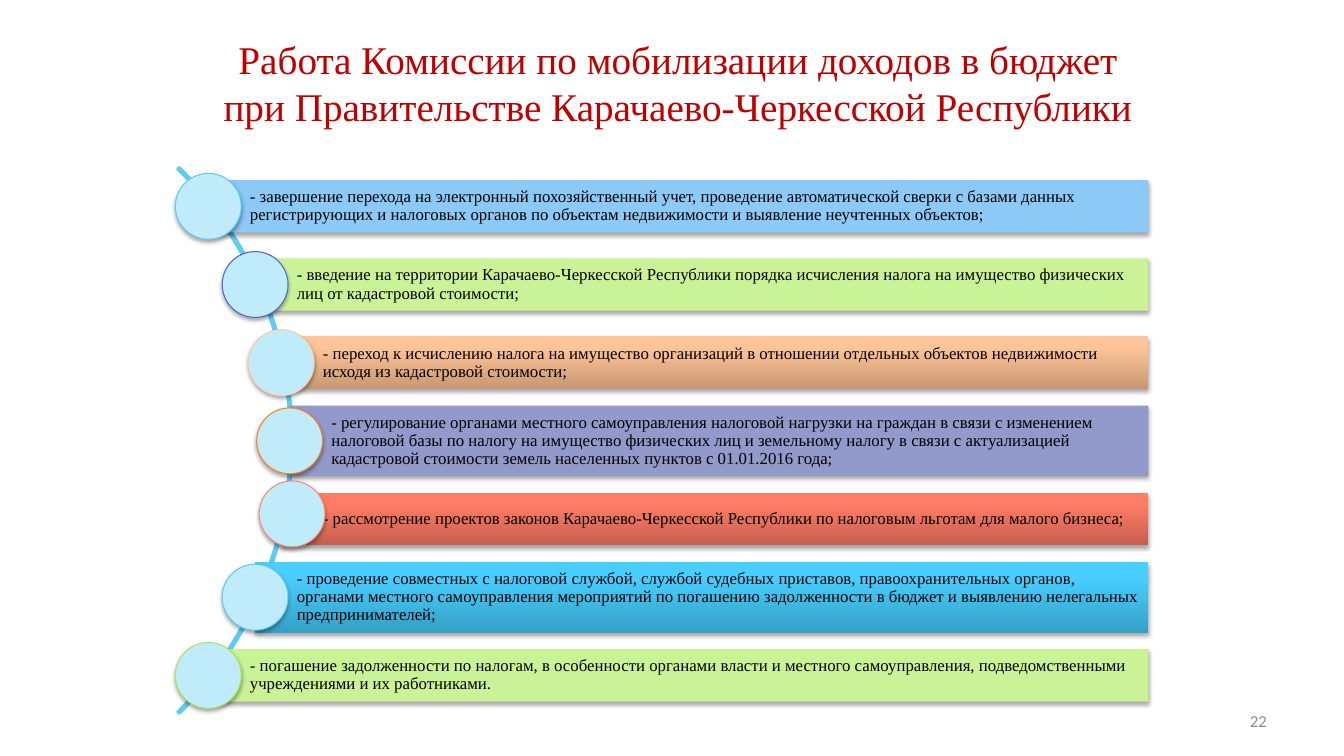
from lxml.etree import SubElement
from pptx import Presentation
from pptx.dml.color import RGBColor
from pptx.enum.shapes import MSO_SHAPE
from pptx.enum.text import MSO_ANCHOR, MSO_AUTO_SIZE, PP_ALIGN
from pptx.oxml.ns import qn
from pptx.util import Cm, Pt

BLACK = RGBColor(0x00, 0x00, 0x00)
DARK_RED = RGBColor(0xC0, 0x00, 0x00)
GREY = RGBColor(0x8C, 0x8C, 0x8C)
PALE_CYAN = RGBColor(0xBF, 0xEB, 0xFA)
CYAN = RGBColor(0x5E, 0xCC, 0xF3)
INDIGO = RGBColor(0x4E, 0x67, 0xC8)
PEACH = RGBColor(0xFF, 0xCC, 0xA6)
ORANGE = RGBColor(0xFF, 0x80, 0x21)
SALMON = RGBColor(0xF6, 0x8D, 0x7B)
GREEN = RGBColor(0xA7, 0xEA, 0x52)
SKY = RGBColor(0x8C, 0xC9, 0xF7)
LIME = RGBColor(0xCA, 0xF2, 0x97)
LAVENDER = RGBColor(0x91, 0x9A, 0xCA)
PEACH_SHADE = (RGBColor(0xC8, 0x97, 0x72), RGBColor(0xFF, 0xC5, 0x99))
RED_SHADE = (RGBColor(0xC5, 0x5F, 0x4E), RGBColor(0xFF, 0x7D, 0x67))
BLUE_SHADE = (RGBColor(0x35, 0xA0, 0xC6), RGBColor(0x48, 0xCF, 0xFF))

SERIF = "Times New Roman"
BAR_RIGHT = 28.94
FIRST_CENTRE = 5.2
PITCH = 1.97
DOT = 1.66
LOW, HIGH = 1.32, 1.78

TITLE = (
    "Работа Комиссии по мобилизации доходов в бюджет",
    "при Правительстве Карачаево-Черкесской Республики",
)

# left, height, bar fill, dot outline, dot shift, wording
MEASURES = [
    (5.25, LOW, SKY, CYAN, (0, 0),
     "- завершение перехода на электронный похозяйственный учет, проведение "
     "автоматической сверки с базами данных регистрирующих и налоговых органов "
     "по объектам недвижимости и выявление неучтенных объектов;"),
    (6.43, LOW, LIME, INDIGO, (0, 0),
     "- введение на территории Карачаево-Черкесской Республики порядка "
     "исчисления налога на имущество физических лиц от кадастровой стоимости;"),
    (7.09, LOW, PEACH_SHADE, PEACH, (0, 0),
     "- переход к исчислению налога на имущество организаций в отношении "
     "отдельных объектов недвижимости исходя из кадастровой стоимости;"),
    (7.3, HIGH, LAVENDER, ORANGE, (0, 0),
     "- регулирование органами местного самоуправления налоговой нагрузки на "
     "граждан в связи с изменением налоговой базы по налогу на имущество "
     "физических лиц и земельному налогу в связи с актуализацией кадастровой "
     "стоимости земель населенных пунктов с 01.01.2016 года;"),
    (7.09, LOW, RED_SHADE, SALMON, (0.27, -0.13),
     "- рассмотрение проектов законов Карачаево-Черкесской Республики по "
     "налоговым льготам для малого бизнеса;"),
    (6.43, HIGH, BLUE_SHADE, CYAN, (0, 0),
     "- проведение совместных с налоговой службой, службой судебных приставов, "
     "правоохранительных органов, органами местного самоуправления мероприятий "
     "по погашению задолженности в бюджет и выявлению нелегальных "
     "предпринимателей;"),
    (5.25, LOW, LIME, GREEN, (0, 0),
     "- погашение задолженности по налогам, в особенности органами власти и "
     "местного самоуправления, подведомственными учреждениями и их работниками."),
]


def format_text(paragraph, font_name, size, colour, align):
    paragraph.alignment = align
    for run in paragraph.runs:
        run.font.name = font_name
        run.font.size = Pt(size)
        run.font.color.rgb = colour


def cast_shadow(shape):
    shape.shadow.inherit = False
    effects = shape._element.spPr.find(qn("a:effectLst"))
    outer = SubElement(effects, qn("a:outerShdw"), blurRad=str(Pt(3.1)),
                       dist=str(Pt(1.8)), dir="5400000", rotWithShape="0")
    black = SubElement(outer, qn("a:srgbClr"), val=str(BLACK))
    SubElement(black, qn("a:alpha"), val="35000")


def paint(shape, colour):
    if isinstance(colour, RGBColor):
        shape.fill.solid()
        shape.fill.fore_color.rgb = colour
        return
    shape.fill.gradient()
    shape.fill.gradient_angle = 90
    for stop, shade, position in zip(shape.fill.gradient_stops, colour, (0, 0.8)):
        stop.color.rgb = shade
        stop.position = position


def add_title(slide):
    title = slide.shapes.title
    title.left, title.top, title.width, title.height = Cm(5.13), Cm(0.76), Cm(23.9), Cm(2.64)
    frame = title.text_frame
    frame.text = "\n".join(TITLE)
    frame.auto_size = MSO_AUTO_SIZE.NONE
    frame.vertical_anchor = MSO_ANCHOR.TOP
    for paragraph in frame.paragraphs:
        format_text(paragraph, SERIF, 28, DARK_RED, PP_ALIGN.CENTER)


def add_arc(slide):
    arc = slide.shapes.add_shape(MSO_SHAPE.BLOCK_ARC, Cm(-12.09), Cm(1.37), Cm(19.46), Cm(19.46))
    for index, value in enumerate((189, 27, 0.003)):
        arc.adjustments[index] = value
    arc.fill.background()
    arc.line.color.rgb = CYAN
    arc.line.width = Pt(2)
    arc.shadow.inherit = False


def add_bar(slide, left, centre, height, colour, wording):
    bar = slide.shapes.add_shape(MSO_SHAPE.RECTANGLE, Cm(left), Cm(centre - height / 2),
                                 Cm(BAR_RIGHT - left), Cm(height))
    paint(bar, colour)
    bar.line.fill.background()
    cast_shadow(bar)
    frame = bar.text_frame
    frame.word_wrap = True
    frame.vertical_anchor = MSO_ANCHOR.MIDDLE
    frame.margin_left = Cm(1.05)
    frame.margin_right = frame.margin_top = frame.margin_bottom = Cm(0.08)
    frame.text = wording
    frame.paragraphs[0].line_spacing = 0.9
    format_text(frame.paragraphs[0], SERIF, 12, BLACK, PP_ALIGN.LEFT)


def add_dot(slide, x, y, outline):
    dot = slide.shapes.add_shape(MSO_SHAPE.OVAL, Cm(x - DOT / 2), Cm(y - DOT / 2), Cm(DOT), Cm(DOT))
    paint(dot, PALE_CYAN)
    dot.line.color.rgb = outline
    dot.line.width = Pt(0.75)
    cast_shadow(dot)


def add_page_number(slide):
    frame = slide.shapes.add_textbox(Cm(24.28), Cm(17.65), Cm(7.9), Cm(1.02)).text_frame
    frame.word_wrap = True
    frame.vertical_anchor = MSO_ANCHOR.MIDDLE
    frame.text = "22"
    format_text(frame.paragraphs[0], "Calibri", 12, GREY, PP_ALIGN.RIGHT)


def main():
    deck = Presentation()
    deck.slide_width, deck.slide_height = Cm(33.87), Cm(19.05)
    slide = deck.slides.add_slide(deck.slide_layouts[5])
    add_title(slide)
    add_arc(slide)
    for row, (left, height, colour, outline, shift, wording) in enumerate(MEASURES):
        centre = FIRST_CENTRE + row * PITCH
        add_bar(slide, left, centre, height, colour, wording)
        add_dot(slide, left + shift[0], centre + shift[1], outline)
    add_page_number(slide)
    deck.save("out.pptx")


if __name__ == "__main__":
    main()
